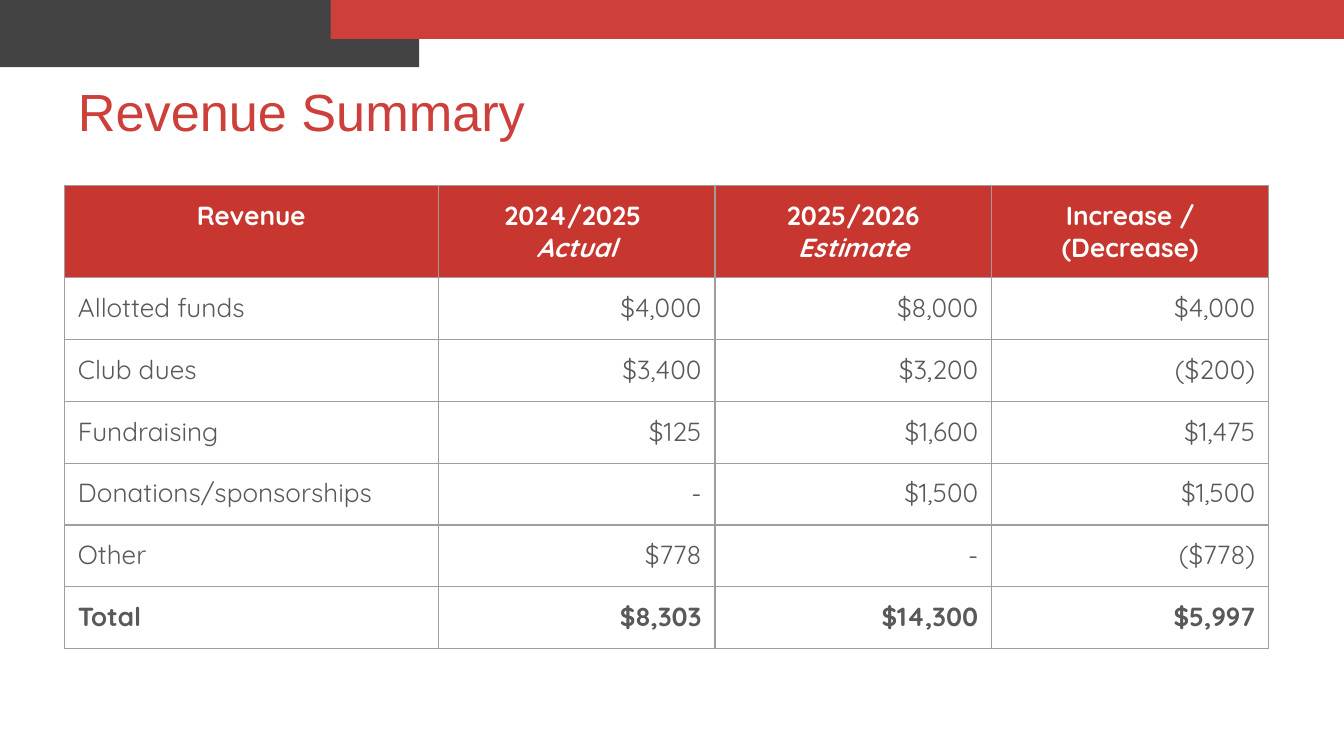
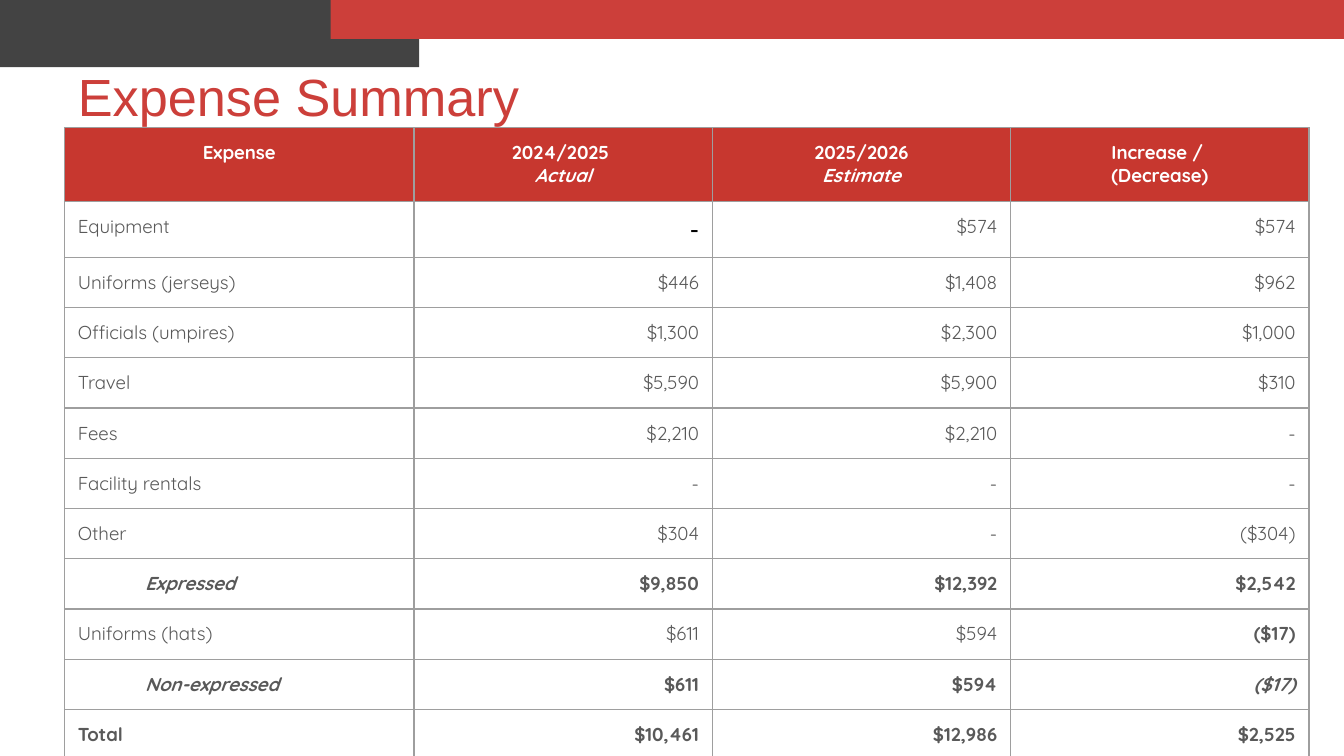
"""Build the revenue and expense summary slides."""
from lxml.etree import SubElement
from pptx import Presentation
from pptx.dml.color import RGBColor
from pptx.enum.shapes import MSO_SHAPE
from pptx.enum.text import MSO_ANCHOR, MSO_AUTO_SIZE, PP_ALIGN
from pptx.oxml.ns import qn
from pptx.util import Inches, Pt

RED = RGBColor(0xCC, 0x3F, 0x3A)
HEADER_RED = RGBColor(0xC7, 0x37, 0x2F)
CHARCOAL = RGBColor(0x43, 0x43, 0x43)
GREY = RGBColor(0x59, 0x59, 0x59)
BORDER = RGBColor(0x9E, 0x9E, 0x9E)
WHITE = RGBColor(0xFF, 0xFF, 0xFF)
BLACK = RGBColor(0, 0, 0)

TITLE_FONT = "Arial"
TABLE_FONT = "Quicksand"
LEFT = 0.48
MARGIN = 0.1
BANDS = [
    (CHARCOAL, (-0.01, -0.01, 3.13, 0.51)),
    (RED, (2.46, -0.02, 7.54, 0.31)),
]

PLAIN = {}
BOLD = {"bold": True}
SUBTOTAL = {"bold": True, "italic": True, "indent": 0.5}

SUMMARIES = [
    {
        "title": "Revenue Summary",
        "title_top": 0.49,
        "table_top": 1.38,
        "size": 14,
        "columns": [2.78, 2.06, 2.06, 2.06],
        "heights": (0.66, 0.46),
        "header": ["Revenue", "2024/2025 \nActual", "2025/2026\nEstimate",
                   "Increase / (Decrease)"],
        "rows": [
            (PLAIN, "Allotted funds", "$4,000", "$8,000", "$4,000"),
            (PLAIN, "Club dues", "$3,400", "$3,200", "($200)"),
            (PLAIN, "Fundraising", "$125", "$1,600", "$1,475"),
            (PLAIN, "Donations/sponsorships", "-", "$1,500", "$1,500"),
            (PLAIN, "Other", "$778", "-", "($778)"),
            (BOLD, "Total", "$8,303", "$14,300", "$5,997"),
        ],
        "exceptions": {},
    },
    {
        "title": "Expense Summary",
        "title_top": 0.38,
        "table_top": 0.95,
        "size": 10,
        "columns": [2.6, 2.22, 2.22, 2.22],
        "heights": (0.45, 0.35),
        "header": ["Expense", "2024/2025 \nActual", "2025/2026\nEstimate",
                   "Increase / \n(Decrease)"],
        "rows": [
            (PLAIN, "Equipment", "-", "$574", "$574"),
            (PLAIN, "Uniforms (jerseys)", "$446", "$1,408", "$962"),
            (PLAIN, "Officials (umpires)", "$1,300", "$2,300", "$1,000"),
            (PLAIN, "Travel", "$5,590", "$5,900", "$310"),
            (PLAIN, "Fees", "$2,210", "$2,210", "-"),
            (PLAIN, "Facility rentals", "-", "-", "-"),
            (PLAIN, "Other", "$304", "-", "($304)"),
            (SUBTOTAL, "Expressed", "$9,850", "$12,392", "$2,542"),
            (PLAIN, "Uniforms (hats)", "$611", "$594", "($17)"),
            (SUBTOTAL, "Non-expressed", "$611", "$594", "($17)"),
            (BOLD, "Total", "$10,461", "$12,986", "$2,525"),
        ],
        "exceptions": {
            ("Equipment", 1): {"size": 14, "font": TITLE_FONT, "color": BLACK},
            ("Uniforms (hats)", 3): {"bold": True},
            ("Non-expressed", 3): {"italic": True},
        },
    },
]


def write(frame, text, size=14, font=TABLE_FONT, color=GREY, bold=False,
          italic=False, align=PP_ALIGN.LEFT, indent=0, italic_lines=()):
    """Fill a text frame with one formatted paragraph per line."""
    for index, line in enumerate(text.split("\n")):
        para = frame.add_paragraph() if index else frame.paragraphs[0]
        para.alignment = align
        if indent:
            properties = para._p.get_or_add_pPr()
            properties.set("marL", str(Inches(indent)))
            properties.set("indent", "0")
        span = para.add_run()
        span.text = line
        span.font.size = Pt(size)
        span.font.name = font
        span.font.color.rgb = color
        span.font.bold = bold
        span.font.italic = italic or line in italic_lines


def set_margins(target):
    """Give a cell or text frame equal margins on all sides."""
    for side in ("left", "top", "right", "bottom"):
        setattr(target, f"margin_{side}", Inches(MARGIN))


def set_borders(cell):
    """Draw a thin grey line on each side of a cell."""
    properties = cell._tc.get_or_add_tcPr()
    for index, side in enumerate(("lnL", "lnR", "lnT", "lnB")):
        line = properties.makeelement(qn(f"a:{side}"), {"w": str(Pt(0.75))})
        fill = SubElement(line, qn("a:solidFill"))
        SubElement(fill, qn("a:srgbClr"), val=str(BORDER))
        properties.insert(index, line)


def prepare_layout(layout, slide):
    """Keep the layout's title and put the shared bands behind it."""
    for placeholder in list(layout.placeholders)[1:]:
        placeholder.element.getparent().remove(placeholder.element)
    for index, (color, place) in enumerate(BANDS):
        band = slide.shapes.add_shape(MSO_SHAPE.RECTANGLE, *map(Inches, place))
        band.shadow.inherit = False
        band.fill.solid()
        band.fill.fore_color.rgb = color
        band.line.fill.background()
        layout.shapes.element.insert(2 + index, band.element)


def add_title(slide, summary):
    """Place and format the slide title."""
    title = slide.shapes.title
    title.left, title.top = Inches(LEFT), Inches(summary["title_top"])
    title.width, title.height = Inches(8.86), Inches(0.63)
    frame = title.text_frame
    frame.auto_size = MSO_AUTO_SIZE.NONE
    frame.vertical_anchor = MSO_ANCHOR.TOP
    set_margins(frame)
    write(frame, summary["title"], size=28, font=TITLE_FONT, color=RED)


def cell_format(summary, row_style, label, column):
    """Return the text format of a body cell."""
    style = {"size": summary["size"]}
    if column == 0:
        style.update(row_style)
    else:
        style.update(bold=row_style.get("bold", False), align=PP_ALIGN.RIGHT)
    return style | summary["exceptions"].get((label, column), {})


def add_summary_table(slide, summary):
    """Build the table with its header, body and total rows."""
    header_height, body_height = summary["heights"]
    heights = [header_height] + [body_height] * len(summary["rows"])
    widths = summary["columns"]
    table = slide.shapes.add_table(
        len(heights), len(widths), Inches(LEFT), Inches(summary["table_top"]),
        Inches(sum(widths)), Inches(sum(heights))).table
    table.first_row = table.horz_banding = False
    for column, width in zip(table.columns, widths):
        column.width = Inches(width)
    for row, height in zip(table.rows, heights):
        row.height = Inches(height)
    for cell in table.iter_cells():
        set_margins(cell)
        cell.fill.background()
        set_borders(cell)
    for column, text in enumerate(summary["header"]):
        cell = table.cell(0, column)
        cell.fill.solid()
        cell.fill.fore_color.rgb = HEADER_RED
        write(cell.text_frame, text, size=summary["size"], color=WHITE,
              bold=True, align=PP_ALIGN.CENTER,
              italic_lines=("Actual", "Estimate"))
    for row, (row_style, *texts) in enumerate(summary["rows"], start=1):
        for column, text in enumerate(texts):
            style = cell_format(summary, row_style, texts[0], column)
            write(table.cell(row, column).text_frame, text, **style)


def main():
    """Create and save the deck."""
    deck = Presentation()
    deck.slide_width = Inches(10)
    deck.slide_height = deck.slide_width * 9 // 16
    layout = deck.slide_layouts[5]
    for index, summary in enumerate(SUMMARIES):
        slide = deck.slides.add_slide(layout)
        if index == 0:
            prepare_layout(layout, slide)
        add_title(slide, summary)
        add_summary_table(slide, summary)
    deck.save("out.pptx")


if __name__ == "__main__":
    main()
